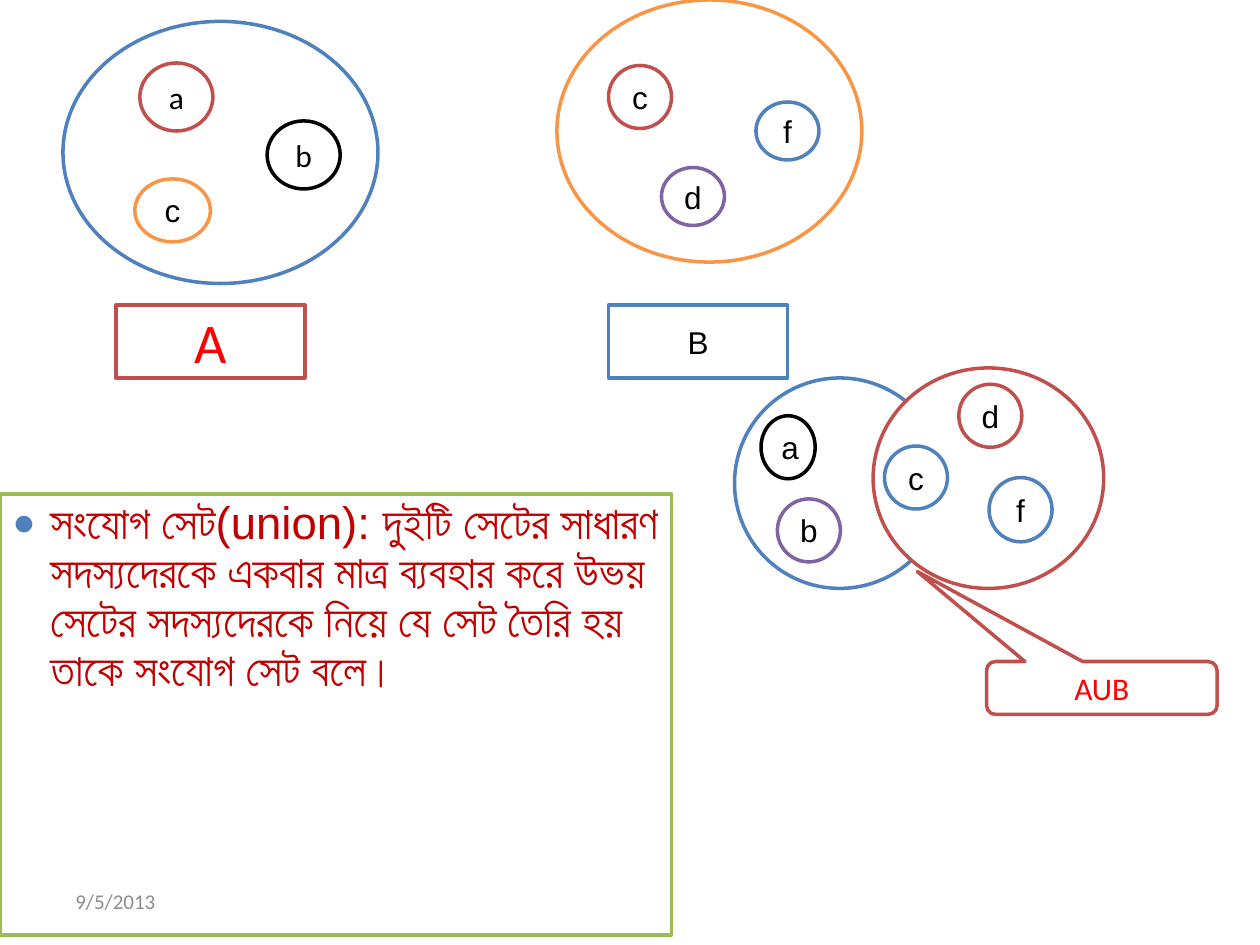
from lxml import etree
from pptx import Presentation
from pptx.dml.color import RGBColor
from pptx.enum.shapes import MSO_SHAPE as Shape
from pptx.enum.text import MSO_ANCHOR as Anchor, PP_ALIGN as Align
from pptx.oxml.ns import qn
from pptx.util import Inches, Pt

WHITE = RGBColor(0xFF, 0xFF, 0xFF)
BLACK = RGBColor(0, 0, 0)
BLUE = RGBColor(0x4F, 0x81, 0xBD)
RED = RGBColor(0xC0, 0x50, 0x4D)
GREEN = RGBColor(0x9B, 0xBB, 0x59)
PURPLE = RGBColor(0x80, 0x64, 0xA2)
ORANGE = RGBColor(0xF7, 0x96, 0x46)
BRIGHT_RED = RGBColor(0xFF, 0, 0)
DARK_RED = RGBColor(0xC0, 0, 0)
GRAY = RGBColor(0x8C, 0x8C, 0x8C)

DEFINITION = (
    "সংযোগ সেট(union): দুইটি সেটের সাধারণ সদস্যদেরকে একবার মাত্র ব্যবহার করে "
    "উভয় সেটের সদস্যদেরকে নিয়ে যে সেট তৈরি হয় তাকে সংযোগ সেট বলে।"
)

# Each set: outline and members, as (left, top, width, height), line colour
SET_A = ((0.5, 0.17, 2.5, 2.08), BLUE)
SET_B = ((4.42, 0, 2.42, 2.08), ORANGE)
UNION_LEFT = ((5.83, 3, 1.67, 1.67), BLUE)
UNION_RIGHT = ((6.93, 2.92, 1.83, 1.75), RED)

MEMBERS_A = [
    ("a", (1.11, 0.5, 0.58, 0.54), RED, "Calibri"),
    ("c", (1.07, 1.42, 0.6, 0.5), ORANGE, "Arial"),
    ("b", (2.12, 0.96, 0.58, 0.54), BLACK, "Calibri"),
]
MEMBERS_B = [
    ("f", (6, 0.81, 0.5, 0.46), BLUE, "Arial"),
    ("c", (4.83, 0.52, 0.5, 0.5), RED, "Arial"),
    ("d", (5.25, 1.33, 0.5, 0.46), PURPLE, "Arial"),
]
MEMBERS_UNION = [
    ("a", (6.04, 3.3, 0.43, 0.5), BLACK, "Arial"),
    ("c", (7.02, 3.54, 0.5, 0.5), BLUE, "Arial"),
    ("b", (6.17, 3.96, 0.5, 0.5), PURPLE, "Arial"),
    ("f", (7.85, 3.79, 0.5, 0.51), BLUE, "Arial"),
    ("d", (7.61, 3.05, 0.5, 0.5), RED, "Arial"),
]


def add_outline(page, kind, place, line_color):
    shape = page.shapes.add_shape(kind, *map(Inches, place))
    shape.shadow.inherit = False
    shape.fill.solid()
    shape.fill.fore_color.rgb = WHITE
    shape.line.color.rgb = line_color
    shape.line.width = Pt(2)
    return shape


def write(shape, text, font_name, size, color, align=Align.CENTER, anchor=Anchor.MIDDLE):
    frame = shape.text_frame
    frame.word_wrap = True
    frame.vertical_anchor = anchor
    frame.text = text
    para = frame.paragraphs[0]
    para.alignment = align
    font = para.runs[0].font
    font.name = font_name
    font.size = Pt(size)
    font.color.rgb = color
    return para


def add_members(page, members):
    for text, place, line_color, font_name in members:
        circle = add_outline(page, Shape.OVAL, place, line_color)
        write(circle, text, font_name, 18, BLACK)


def add_bullet(para, indent, color):
    props = para._p.get_or_add_pPr()
    props.set("marL", str(Inches(indent)))
    props.set("indent", str(-Inches(indent)))
    bullet_color = etree.SubElement(props, qn("a:buClr"))
    etree.SubElement(bullet_color, qn("a:srgbClr"), val=str(color))
    etree.SubElement(props, qn("a:buSzPct"), val="85000")
    etree.SubElement(props, qn("a:buFont"), typeface="Arial")
    etree.SubElement(props, qn("a:buChar"), char="●")


def add_definition(page):
    box = add_outline(page, Shape.RECTANGLE, (0, 3.92, 5.33, 3.5), GREEN)
    para = write(box, DEFINITION, "Arial", 26, DARK_RED, Align.LEFT, Anchor.TOP)
    para.line_spacing = 0.9
    add_bullet(para, 0.3, BLUE)


def add_union_callout(page):
    callout = add_outline(page, Shape.ROUNDED_RECTANGULAR_CALLOUT,
                          (7.83, 5.25, 1.83, 0.42), RED)
    for index, value in enumerate((-0.8, -2.2, 0.17)):
        callout.adjustments[index] = value
    write(callout, "AUB", "Calibri", 18, BRIGHT_RED)


def add_set_names(page):
    name_a = add_outline(page, Shape.RECTANGLE, (0.92, 2.42, 1.5, 0.58), RED)
    write(name_a, "A", "Calibri", 32, BRIGHT_RED)
    name_b = add_outline(page, Shape.RECTANGLE, (4.83, 2.42, 1.42, 0.58), BLUE)
    write(name_b, "B", "Arial", 18, BLACK)


def add_date(page):
    box = page.shapes.add_textbox(*map(Inches, (0.5, 6.95, 2.33, 0.4)))
    write(box, "9/5/2013", "Calibri", 12, GRAY, Align.LEFT)


def main():
    deck = Presentation()
    deck.slide_width, deck.slide_height = Inches(10), Inches(7.5)
    page = deck.slides.add_slide(deck.slide_layouts[6])

    add_definition(page)
    add_union_callout(page)
    for place, line_color in (SET_A, SET_B):
        add_outline(page, Shape.OVAL, place, line_color)
    add_set_names(page)
    add_members(page, MEMBERS_A + MEMBERS_B)
    for place, line_color in (UNION_LEFT, UNION_RIGHT):
        add_outline(page, Shape.OVAL, place, line_color)
    add_members(page, MEMBERS_UNION)
    add_date(page)

    deck.save("out.pptx")


if __name__ == "__main__":
    main()
